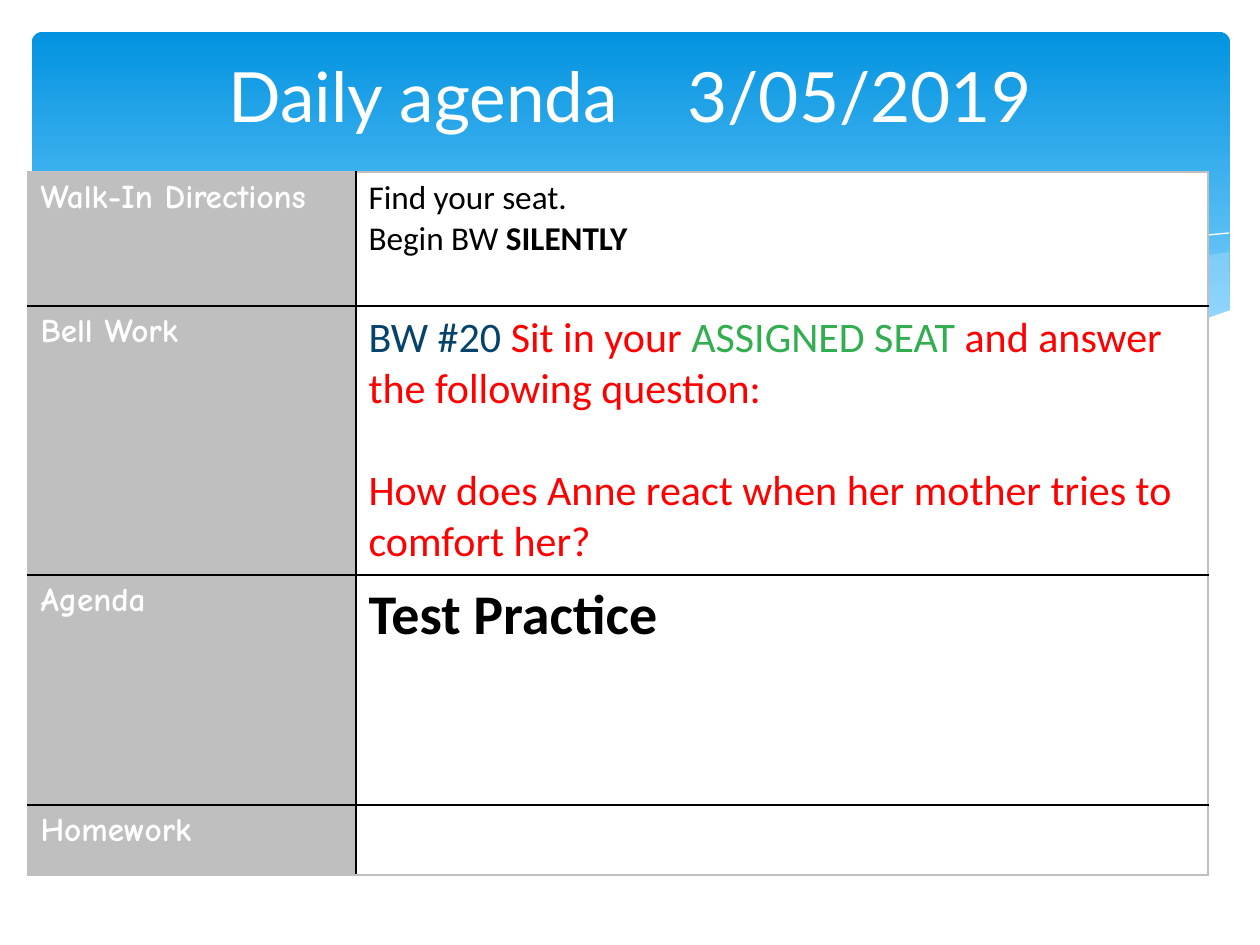
"""Build the daily agenda slide with its wave banner and schedule table."""
from lxml.etree import SubElement
from pptx import Presentation
from pptx.dml.color import RGBColor
from pptx.enum.shapes import MSO_SHAPE as Shape
from pptx.enum.text import MSO_ANCHOR as Anchor, MSO_AUTO_SIZE as AutoSize, PP_ALIGN as Align
from pptx.oxml.ns import qn
from pptx.util import Pt

SCALE = 914400 / 126
WHITE = RGBColor(0xFF, 0xFF, 0xFF)
BLACK = RGBColor(0x00, 0x00, 0x00)
GREY = RGBColor(0xBF, 0xBF, 0xBF)
RED = RGBColor(0xFF, 0x00, 0x00)
GREEN = RGBColor(0x32, 0xAE, 0x51)
NAVY = RGBColor(0x06, 0x43, 0x6B)
DEEP_SKY = RGBColor(0x02, 0x93, 0xE0)
LIGHT_SKY = RGBColor(0x83, 0xD3, 0xFE)
MIST = RGBColor(0xC6, 0xE7, 0xFC)

RIGHT_WAVE = [
    (1229, 252), (1162, 263), (1085, 281), (981, 305), (889, 324), (833, 334), (889, 341),
    (937, 345), (984, 349), (1038, 350), (1089, 348), (1141, 341), (1187, 330), (1230, 311)]
WIDE_WAVE = [
    (1125, 344), (1055, 334), (977, 320), (890, 302), (793, 280), (736, 266), (682, 255),
    (632, 247), (586, 241), (530, 236), (479, 233), (433, 234), (394, 237), (360, 241),
    (456, 256), (538, 272), (619, 292), (713, 312), (799, 328), (874, 341), (944, 348),
    (1003, 350), (1068, 349)]
LONG_CREST = [
    (389, 246), (445, 238), (505, 236), (567, 237), (643, 242), (733, 252), (838, 268),
    (957, 295), (1047, 316), (1143, 343)]
RIGHT_CREST = [
    (772, 324), (876, 296), (978, 272), (1053, 257), (1127, 244), (1198, 236), (1229, 233)]
WHITE_WAVE = [
    (1231, 310), (1184, 326), (1133, 339), (1071, 346), (1003, 349), (937, 346), (867, 340),
    (790, 330), (699, 315), (600, 294), (515, 275), (428, 256), (368, 239), (290, 233),
    (223, 232), (166, 234), (120, 241), (84, 251), (58, 258), (37, 265), (29, 268),
    (29, 415), (1231, 415)]


def px(length):
    return round(length * SCALE)


def text(words, **style):
    return words, style


def label(words):
    return [[text(words, font="Comic Neue", color=WHITE, bold=True)]]


AGENDA = [
    (134, label("Walk-In Directions"),
     [[text("Find your seat.")], [text("Begin BW "), text("SILENTLY", bold=True)]]),
    (269, label("Bell Work"),
     [[text("BW #20 ", size=24, color=NAVY),
       text("Sit in your ", size=24, color=RED),
       text("ASSIGNED SEAT ", size=24, color=GREEN),
       text("and answer the following question:", size=24, color=RED)],
      [text("How does Anne react when her mother tries to comfort her?", size=24, color=RED)]]),
    (230, label("Agenda"), [[text("Test Practice", size=32, bold=True)]]),
    (70, label("Homework"), []),
]


class AgendaPage:
    """Hold the default text style and the slide being drawn."""

    font, size, color = "Calibri", 19, BLACK

    def __init__(self, deck):
        self.page = deck.slides.add_slide(deck.slide_layouts[5])

    def banner(self, left, top, width, height):
        box = self.page.shapes.add_shape(
            Shape.ROUNDED_RECTANGLE, px(left), px(top), px(width), px(height))
        box.adjustments[0] = 0.03
        box.shadow.inherit = False
        box.line.fill.background()
        box.fill.gradient()
        box.fill.gradient_angle = 270
        stops = box.fill.gradient_stops
        for stop, color, position in zip(stops, (DEEP_SKY, LIGHT_SKY), (0, 0.9)):
            stop.color.rgb = color
            stop.position = position

    def outline(self, points, close):
        builder = self.page.shapes.build_freeform(*points[0], scale=SCALE)
        builder.add_line_segments(points[1:], close=close)
        shape = builder.convert_to_shape()
        shape.shadow.inherit = False
        return shape

    def wave(self, points, color, opacity=100):
        shape = self.outline(points, True)
        shape.line.fill.background()
        shape.fill.solid()
        shape.fill.fore_color.rgb = color
        if opacity < 100:
            tint = shape._element.spPr.find(".//" + qn("a:srgbClr"))
            SubElement(tint, qn("a:alpha"), val=str(opacity * 1000))

    def crest(self, points):
        shape = self.outline(points, False)
        shape.fill.background()
        shape.line.color.rgb = WHITE
        shape.line.width = Pt(0)

    def span(self, para, words, font=None, size=None, color=None, bold=False):
        span = para.add_run()
        span.text = words
        span.font.name = font or self.font
        span.font.size = Pt(size or self.size)
        span.font.color.rgb = self.color if color is None else color
        span.font.bold = bold

    def title(self, words, left, top, width, height, **style):
        box = self.page.shapes.title
        self.page.shapes._spTree.append(box._element)
        box.left, box.top, box.width, box.height = map(px, (left, top, width, height))
        frame = box.text_frame
        frame.auto_size = AutoSize.NONE
        frame.vertical_anchor = Anchor.TOP
        frame.paragraphs[0].alignment = Align.CENTER
        self.span(frame.paragraphs[0], words, **style)

    def borders(self, cell, edges):
        for side, color in zip("LRTB", edges):
            line = SubElement(cell._tc.get_or_add_tcPr(), qn("a:ln" + side), w=str(Pt(1)))
            fill = SubElement(line, qn("a:solidFill"))
            SubElement(fill, qn("a:srgbClr"), val=str(color))

    def cell(self, cell, paras, fill, edges, gap):
        self.borders(cell, edges)
        cell.fill.solid()
        cell.fill.fore_color.rgb = fill
        frame = cell.text_frame
        for index, spans in enumerate(paras):
            para = frame.add_paragraph() if index else frame.paragraphs[0]
            if index and gap:
                para.space_before = Pt(gap)
            for words, style in spans:
                self.span(para, words, **style)

    def table(self, rows, left, top, widths, gaps):
        height = sum(row[0] for row in rows)
        table = self.page.shapes.add_table(
            len(rows), len(widths), px(left), px(top), px(sum(widths)), px(height)).table
        table.first_row = table.horz_banding = False
        for column, width in zip(table.columns, widths):
            column.width = px(width)
        last = len(rows) - 1
        for index, (row_height, heading, details) in enumerate(rows):
            table.rows[index].height = px(row_height)
            above = BLACK if index else GREY
            below = BLACK if index < last else GREY
            self.cell(table.cell(index, 0), heading, GREY, (GREY, BLACK, above, below), 0)
            self.cell(table.cell(index, 1), details, WHITE, (BLACK, GREY, above, below),
                      gaps.get(index, 0))


def main():
    deck = Presentation()
    deck.slide_width, deck.slide_height = px(1260), px(945)
    page = AgendaPage(deck)
    page.banner(32, 32, 1198, 340)
    page.wave(RIGHT_WAVE, MIST, opacity=29)
    page.wave(WIDE_WAVE, MIST, opacity=40)
    page.crest(LONG_CREST)
    page.crest(RIGHT_CREST)
    page.wave(WHITE_WAVE, WHITE)
    page.title("Daily agenda\t 3/05/2019", 63, 47, 1134, 173,
               font="Lato", size=39.6, color=WHITE)
    page.table(AGENDA, 28, 172, (328, 852), gaps={1: 29})
    deck.save("out.pptx")


if __name__ == "__main__":
    main()
